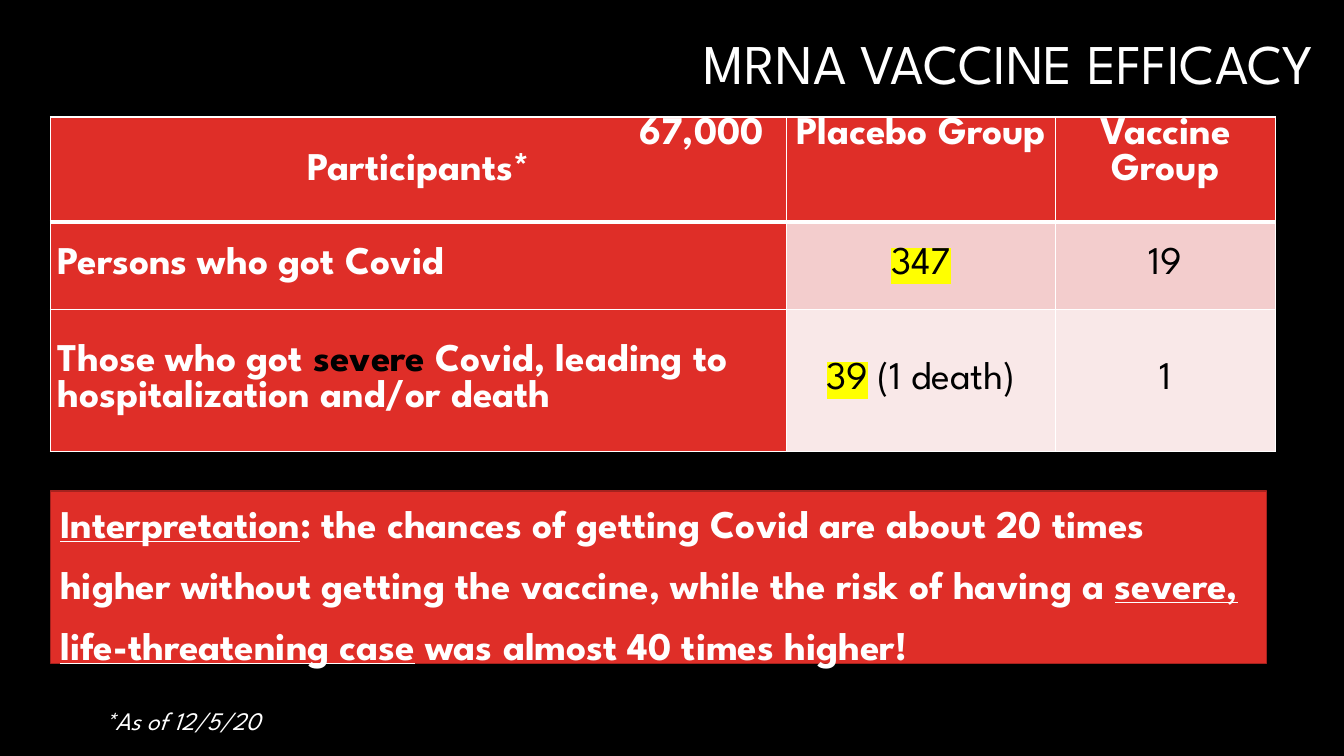
from dataclasses import dataclass
from typing import Optional

from lxml.etree import SubElement
from pptx import Presentation
from pptx.dml.color import RGBColor
from pptx.enum.shapes import MSO_SHAPE
from pptx.enum.text import MSO_ANCHOR, PP_ALIGN
from pptx.oxml.ns import qn
from pptx.util import Inches, Pt


@dataclass(frozen=True)
class Theme:
    font: str = "League Spartan"
    black: str = "000000"
    white: str = "FFFFFF"
    red: str = "DF2E28"
    dark_red: str = "A5221E"
    pink: str = "F3CDCD"
    pale_pink: str = "F9E8E8"
    yellow: str = "FFFF00"
    title_size: int = 40
    body_size: int = 28
    note_size: int = 18


THEME = Theme()


@dataclass(frozen=True)
class Span:
    text: str
    color: str = THEME.white
    size: int = THEME.body_size
    bold: bool = True
    italic: bool = False
    underline: bool = False
    highlight: Optional[str] = None


@dataclass(frozen=True)
class Entry:
    spans: tuple[Span, ...]
    fill: str = THEME.red
    align: PP_ALIGN = PP_ALIGN.CENTER
    first_indent: float = 0


def value(text: str, highlight: Optional[str] = None) -> Span:
    return Span(text, THEME.black, bold=False, highlight=highlight)


COLUMN_WIDTHS = (7.3, 2.67, 2.18)
ROW_HEIGHTS = (1.04, 0.87, 1.41)
ROWS = (
    (
        Entry((Span("67,000 Participants*"),), first_indent=5.62),
        Entry((Span("Placebo Group"),)),
        Entry((Span("Vaccine Group"),)),
    ),
    (
        Entry((Span("Persons who got Covid"),), align=PP_ALIGN.LEFT),
        Entry((value("347", THEME.yellow),), THEME.pink),
        Entry((value("19"),), THEME.pink),
    ),
    (
        Entry((Span("Those who got "), Span("severe ", THEME.black),
               Span("Covid, leading to hospitalization and/or death")),
              align=PP_ALIGN.LEFT),
        Entry((value("39", THEME.yellow), value(" (1 death)")), THEME.pale_pink),
        Entry((value("1"),), THEME.pale_pink),
    ),
)
INTERPRETATION = (
    Span("Interpretation", underline=True),
    Span(": the chances of getting Covid are about 20 times higher without "
         "getting the vaccine, while the risk of having a "),
    Span("severe, life-threatening case", underline=True),
    Span(" was almost 40 times higher!"),
)


def write(para, spans: tuple[Span, ...], align: PP_ALIGN, spacing: float = 1.0) -> None:
    para.alignment = align
    para.line_spacing = spacing
    for span in spans:
        run = para.add_run()
        run.text = span.text
        run.font.color.rgb = RGBColor.from_string(span.color)
        if span.highlight:
            properties = run.font._element
            mark = SubElement(properties, qn("a:highlight"))
            SubElement(mark, qn("a:srgbClr"), val=span.highlight)
        formats = {
            "name": THEME.font,
            "size": Pt(span.size),
            "bold": span.bold,
            "italic": span.italic,
            "underline": span.underline,
        }
        for name, setting in formats.items():
            setattr(run.font, name, setting)


def add_borders(cell, bottom_width: int, top_width: int) -> None:
    properties = cell._tc.get_or_add_tcPr()
    widths = {"lnL": 1, "lnR": 1, "lnT": top_width, "lnB": bottom_width}
    for side, width in widths.items():
        line = SubElement(properties, qn(f"a:{side}"), w=str(Pt(width)))
        fill = SubElement(line, qn("a:solidFill"))
        SubElement(fill, qn("a:srgbClr"), val=THEME.white)


def fill_cell(cell, entry: Entry, row: int) -> None:
    add_borders(cell, bottom_width=3 if row == 0 else 1, top_width=3 if row == 1 else 1)
    cell.fill.solid()
    cell.fill.fore_color.rgb = RGBColor.from_string(entry.fill)
    formats = {
        "margin_left": Inches(0.07),
        "margin_right": Inches(0.07),
        "margin_top": 0,
        "margin_bottom": 0,
        "vertical_anchor": MSO_ANCHOR.TOP if row == 0 else MSO_ANCHOR.MIDDLE,
    }
    for name, setting in formats.items():
        setattr(cell, name, setting)
    para = cell.text_frame.paragraphs[0]
    write(para, entry.spans, entry.align)
    if entry.first_indent:
        para._p.get_or_add_pPr().set("indent", str(Inches(entry.first_indent)))


def add_title(page) -> None:
    title = page.shapes.title
    title.left, title.top = Inches(0.3), Inches(0.15)
    title.width, title.height = Inches(12.83), Inches(1.01)
    title.text_frame.vertical_anchor = MSO_ANCHOR.MIDDLE
    span = Span("MRNA VACCINE EFFICACY", size=THEME.title_size, bold=False)
    write(title.text_frame.paragraphs[0], (span,), PP_ALIGN.RIGHT, 0.9)


def add_results(page) -> None:
    table = page.shapes.add_table(
        len(ROW_HEIGHTS), len(COLUMN_WIDTHS), Inches(0.5), Inches(1.16),
        Inches(sum(COLUMN_WIDTHS)), Inches(sum(ROW_HEIGHTS))).table
    for column, width in zip(table.columns, COLUMN_WIDTHS):
        column.width = Inches(width)
    for index, (row, height) in enumerate(zip(table.rows, ROW_HEIGHTS)):
        row.height = Inches(height)
        for cell, entry in zip(row.cells, ROWS[index]):
            fill_cell(cell, entry, index)


def add_interpretation(page) -> None:
    box = page.shapes.add_shape(
        MSO_SHAPE.RECTANGLE, Inches(0.5), Inches(4.87), Inches(12.06), Inches(1.71))
    box.shadow.inherit = False
    box.fill.solid()
    box.fill.fore_color.rgb = RGBColor.from_string(THEME.red)
    box.line.color.rgb = RGBColor.from_string(THEME.dark_red)
    box.line.width = Pt(1)
    box.text_frame.word_wrap = True
    box.text_frame.vertical_anchor = MSO_ANCHOR.MIDDLE
    write(box.text_frame.paragraphs[0], INTERPRETATION, PP_ALIGN.LEFT, 1.3)


def add_footnote(page) -> None:
    box = page.shapes.add_textbox(Inches(0.94), Inches(6.95), Inches(2.95), Inches(0.4))
    box.text_frame.word_wrap = True
    span = Span("*As of 12/5/20", size=THEME.note_size, bold=False, italic=True)
    write(box.text_frame.paragraphs[0], (span,), PP_ALIGN.LEFT)


def main() -> None:
    deck = Presentation()
    deck.slide_width, deck.slide_height = Inches(13.33), Inches(7.5)
    page = deck.slides.add_slide(deck.slide_layouts[5])
    page.background.fill.solid()
    page.background.fill.fore_color.rgb = RGBColor.from_string(THEME.black)
    add_interpretation(page)
    add_title(page)
    add_results(page)
    add_footnote(page)
    deck.save("out.pptx")


if __name__ == "__main__":
    main()
